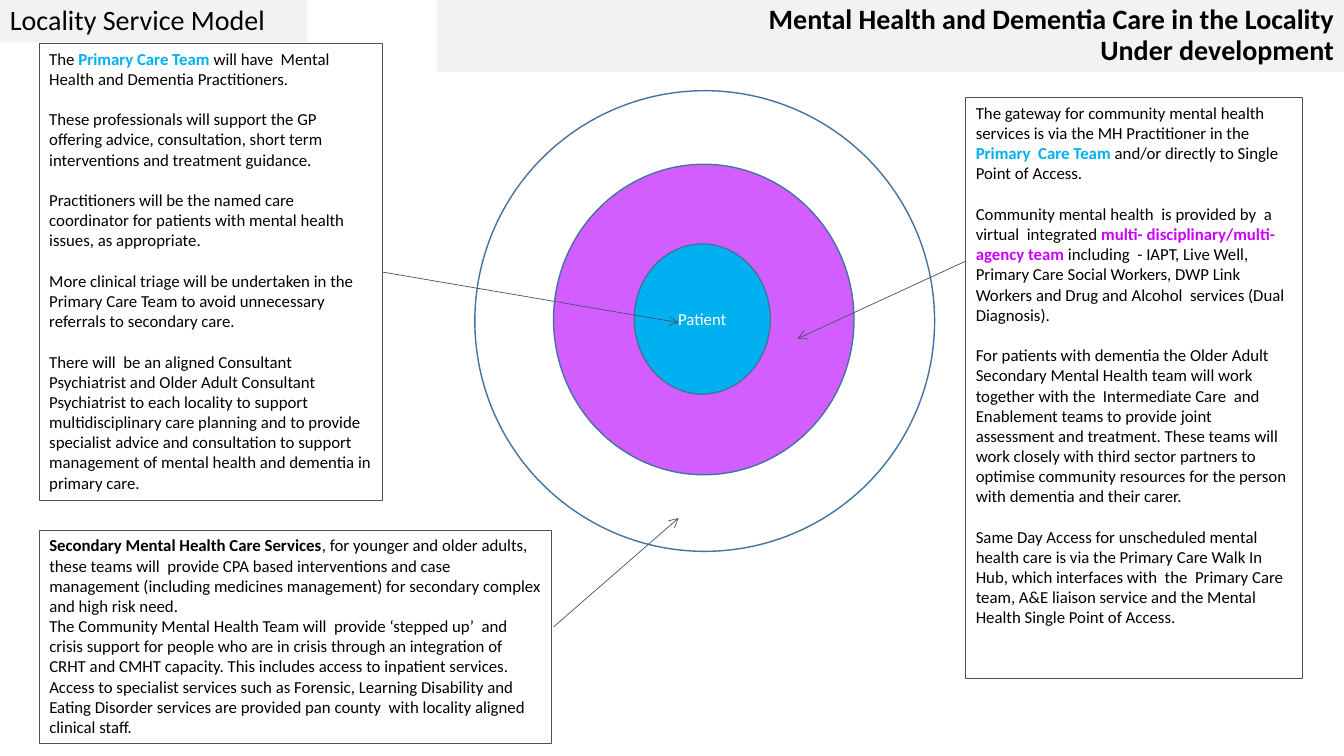
from dataclasses import dataclass

from lxml.etree import SubElement
from pptx import Presentation
from pptx.dml.color import RGBColor
from pptx.enum.shapes import MSO_CONNECTOR, MSO_SHAPE
from pptx.enum.text import MSO_ANCHOR, PP_ALIGN
from pptx.oxml.ns import qn
from pptx.shapes.autoshape import Shape
from pptx.slide import Slide
from pptx.util import Inches, Pt

COLOURS = {
    "white": "FFFFFF",
    "black": "000000",
    "banner": "F2F2F2",
    "primary": "00B0F0",
    "agency": "D35EFF",
    "agency_text": "CC00FF",
    "ring": "43739E",
    "frame": "44546A",
}
COLUMNS, ROWS = 133.3, 75
SLIDE_WIDTH, SLIDE_HEIGHT = Inches(13.33), Inches(7.5)
FONT = "Calibri"
BLANK_LAYOUT = 6
BODY_SIZE, TITLE_SIZE = 12, 20
PARAGRAPH_GAP = 14.5


@dataclass(frozen=True)
class Phrase:
    text: str
    colour: str = "black"
    bold: bool = False


Paragraphs = list[list[Phrase]]


@dataclass(frozen=True)
class Area:
    """Left and width in columns, top and height in rows."""
    left: float
    top: float
    width: float
    height: float


@dataclass(frozen=True)
class Ring:
    area: Area
    fill: str
    label: str = ""


@dataclass(frozen=True)
class Banner:
    area: Area
    lines: tuple[str, ...]
    align: PP_ALIGN
    bold: bool


@dataclass(frozen=True)
class Note:
    area: Area
    paragraphs: Paragraphs
    gap: float = PARAGRAPH_GAP


@dataclass(frozen=True)
class Arrow:
    start: tuple[float, float]
    end: tuple[float, float]


RINGS = [
    Ring(Area(47.1, 9, 45.6, 45.7), "white"),
    Ring(Area(54.9, 16.3, 29.8, 30.8), "agency"),
    Ring(Area(62.9, 24.2, 13.5, 14.9), "primary", "Patient"),
]

BANNERS = [
    Banner(Area(43.3, 0, 90, 7.1),
           ("Mental Health and Dementia Care in the Locality", "Under development"),
           PP_ALIGN.RIGHT, True),
    Banner(Area(0, 0, 30.5, 4.2), ("Locality Service Model",), PP_ALIGN.LEFT, False),
]

NOTES = [
    Note(Area(3.9, 4.3, 34, 45.4), [
        [Phrase("The "), Phrase("Primary Care Team", "primary", True),
         Phrase(" will have  Mental Health and Dementia Practitioners.")],
        [Phrase("These professionals will support the GP offering advice, consultation, "
                "short term interventions and treatment guidance.")],
        [Phrase("Practitioners will be the named care coordinator for patients with "
                "mental health issues, as appropriate.")],
        [Phrase("More clinical triage will be undertaken in the Primary Care Team to "
                "avoid unnecessary referrals to secondary care.")],
        [Phrase("There will  be an aligned Consultant Psychiatrist and Older Adult "
                "Consultant Psychiatrist to each locality to support multidisciplinary "
                "care planning and to provide specialist advice and consultation to "
                "support management of mental health and dementia in primary care.")],
    ]),
    Note(Area(95.8, 9.7, 33.4, 57.6), [
        [Phrase("The gateway for community mental health services is via the MH "
                "Practitioner in the "),
         Phrase("Primary  Care Team ", "primary", True),
         Phrase("and/or directly to Single Point of Access.")],
        [Phrase("Community mental health  is provided by  a virtual  integrated "),
         Phrase("multi- disciplinary/multi-agency team ", "agency_text", True),
         Phrase("including  - IAPT, Live Well, Primary Care Social Workers, DWP Link "
                "Workers and Drug and Alcohol  services (Dual Diagnosis).")],
        [Phrase("For patients with dementia the Older Adult Secondary Mental Health team "
                "will work together with the  Intermediate Care  and Enablement teams to "
                "provide joint assessment and treatment. These teams will work closely "
                "with third sector partners to optimise community resources for the "
                "person with dementia and their carer.")],
        [Phrase("Same Day Access for unscheduled mental health care is via the Primary "
                "Care Walk In Hub, which interfaces with  the  Primary Care team, A&E "
                "liaison service and the Mental Health Single Point of Access.")],
    ]),
    Note(Area(3.9, 52.6, 50.8, 21.2), [
        [Phrase("Secondary Mental Health Care Services", bold=True),
         Phrase(", for younger and older adults, these teams will  provide CPA based "
                "interventions and case management (including medicines management) for "
                "secondary complex and high risk need.")],
        [Phrase("The Community Mental Health Team will  provide ‘stepped up’  and crisis "
                "support for people who are in crisis through an integration of CRHT and "
                "CMHT capacity. This includes access to inpatient services.")],
        [Phrase("Access to specialist services such as Forensic, Learning Disability and "
                "Eating Disorder services are provided pan county  with locality aligned "
                "clinical staff.")],
    ], gap=0),
]

ARROWS = [
    Arrow((38, 27), (67.3, 32)),
    Arrow((54.9, 62.2), (67.3, 51.4)),
    Arrow((95.8, 25.9), (79.1, 33.6)),
]


def across(columns: float) -> int:
    return round(SLIDE_WIDTH * columns / COLUMNS)


def down(rows: float) -> int:
    return round(SLIDE_HEIGHT * rows / ROWS)


def rgb(colour: str) -> RGBColor:
    return RGBColor.from_string(COLOURS[colour])


def add_panel(slide: Slide, kind: MSO_SHAPE, area: Area, fill: str | None = None,
              outline: str | None = None, weight: float = 1) -> Shape:
    panel = slide.shapes.add_shape(kind, across(area.left), down(area.top),
                                   across(area.width), down(area.height))
    panel.shadow.inherit = False
    if fill:
        panel.fill.solid()
        panel.fill.fore_color.rgb = rgb(fill)
    else:
        panel.fill.background()
    if outline:
        panel.line.color.rgb = rgb(outline)
        panel.line.width = Pt(weight)
    else:
        panel.line.fill.background()
    return panel


def write(panel: Shape, paragraphs: Paragraphs, *, size: float = BODY_SIZE,
          align: PP_ALIGN = PP_ALIGN.LEFT, anchor: MSO_ANCHOR = MSO_ANCHOR.MIDDLE,
          spacing: float = 1.0, gap: float = 0) -> None:
    frame = panel.text_frame
    frame.word_wrap = True
    frame.vertical_anchor = anchor
    for index, phrases in enumerate(paragraphs):
        paragraph = frame.add_paragraph() if index else frame.paragraphs[0]
        paragraph.alignment = align
        paragraph.line_spacing = spacing
        paragraph.space_before = Pt(gap if index else 0)
        for phrase in phrases:
            run = paragraph.add_run()
            run.text = phrase.text
            run.font.name = FONT
            run.font.size = Pt(size)
            run.font.bold = phrase.bold
            run.font.color.rgb = rgb(phrase.colour)


def add_arrow(slide: Slide, arrow: Arrow) -> None:
    (start_x, start_y), (end_x, end_y) = arrow.start, arrow.end
    connector = slide.shapes.add_connector(MSO_CONNECTOR.STRAIGHT, across(start_x),
                                           down(start_y), across(end_x), down(end_y))
    connector.line.color.rgb = rgb("frame")
    connector.line.width = Pt(0.5)
    SubElement(connector.line._get_or_add_ln(), qn("a:tailEnd"), type="arrow")
    SubElement(connector._element.spPr, qn("a:effectLst"))


def main() -> None:
    deck = Presentation()
    deck.slide_width, deck.slide_height = SLIDE_WIDTH, SLIDE_HEIGHT
    slide = deck.slides.add_slide(deck.slide_layouts[BLANK_LAYOUT])
    for ring in RINGS:
        circle = add_panel(slide, MSO_SHAPE.OVAL, ring.area, ring.fill, "ring")
        if ring.label:
            write(circle, [[Phrase(ring.label, "white")]], align=PP_ALIGN.CENTER)
    for note in NOTES:
        box = add_panel(slide, MSO_SHAPE.RECTANGLE, note.area, outline="frame", weight=0.75)
        write(box, note.paragraphs, anchor=MSO_ANCHOR.TOP, gap=note.gap)
    for arrow in ARROWS:
        add_arrow(slide, arrow)
    for banner in BANNERS:
        strip = add_panel(slide, MSO_SHAPE.RECTANGLE, banner.area, "banner")
        write(strip, [[Phrase(line, bold=banner.bold)] for line in banner.lines],
              size=TITLE_SIZE, align=banner.align, spacing=0.9)
    deck.save("out.pptx")


if __name__ == "__main__":
    main()
